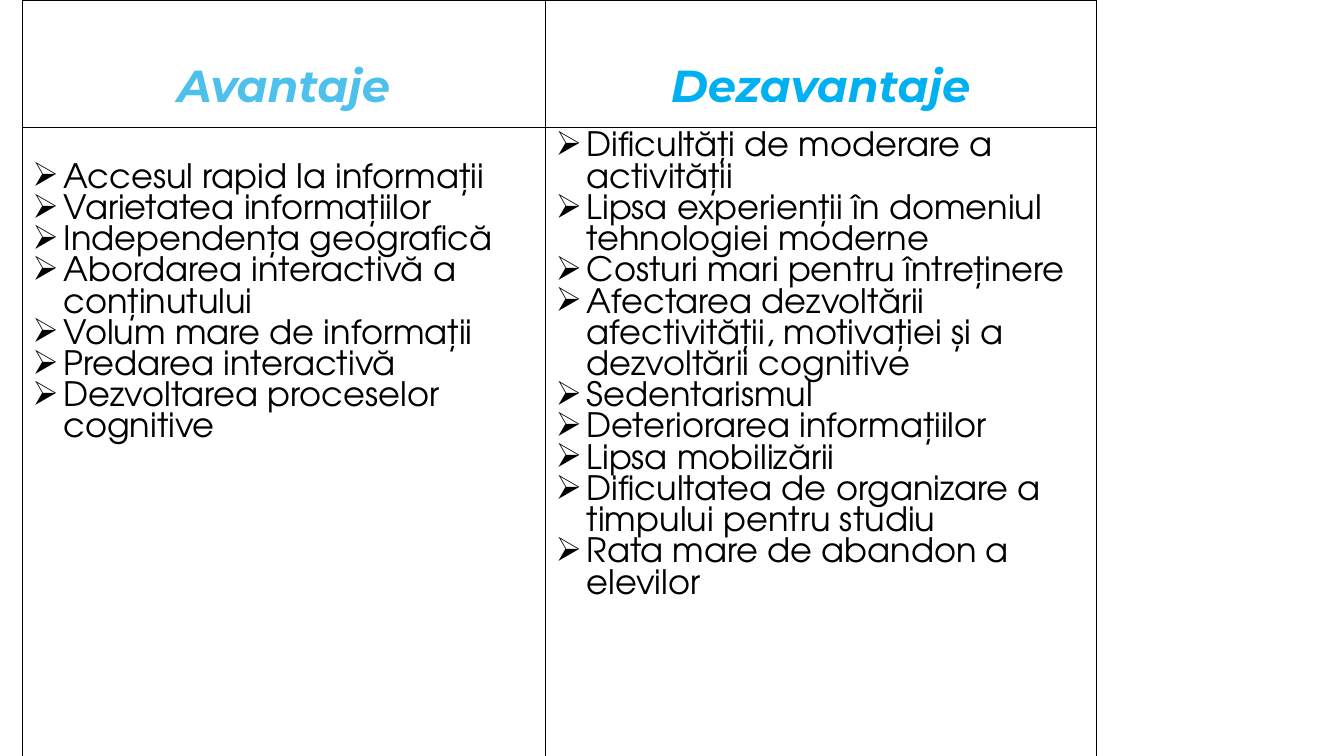
import pptx
import pptx.util
import pptx.dml.color
import pptx.enum.text
import pptx.oxml
import pptx.oxml.ns
from pptx.util import Inches

theme = {
    "line": "000000",
    "edge": 0.5,
    "head": {"name": "Montserrat", "size": pptx.util.Pt(32), "bold": True, "italic": True},
    "body": {"name": "TeX Gyre Adventor", "size": pptx.util.Pt(24), "bold": False, "italic": False},
    "pitch": pptx.util.Pt(22.3),
    "text": "000000",
}
sides = [
    {
        "title": "Avantaje",
        "color": "4EC0EC",
        "width": 5.19,
        "top": 0.36,
        "items": [
            "Accesul rapid la informații",
            "Varietatea informațiilor",
            "Independența geografică",
            "Abordarea interactivă a conținutului",
            "Volum mare de informații",
            "Predarea interactivă",
            "Dezvoltarea proceselor cognitive",
        ],
    },
    {
        "title": "Dezavantaje",
        "color": "00B0F0",
        "width": 5.46,
        "top": 0.05,
        "items": [
            "Dificultăți de moderare a activității",
            "Lipsa experienții în domeniul tehnologiei moderne",
            "Costuri mari pentru întreținere",
            "Afectarea dezvoltării afectivității, motivației și a dezvoltării cognitive",
            "Sedentarismul",
            "Deteriorarea informațiilor",
            "Lipsa mobilizării",
            "Dificultatea de organizare a timpului pentru studiu",
            "Rata mare de abandon a elevilor",
        ],
    },
]


def write(para, text, style, color):
    run = para.add_run()
    run.text = text
    for key, value in theme[style].items():
        setattr(run.font, key, value)
    run.font.color.rgb = pptx.dml.color.RGBColor.from_string(color)


def frame(cell):
    cell.fill.background()
    props = cell._tc.get_or_add_tcPr()
    for index, side in enumerate("LRTB"):
        props.insert(index, pptx.oxml.parse_xml(
            f'<a:ln{side} {pptx.oxml.ns.nsdecls("a")} w="{pptx.util.Pt(theme["edge"])}">'
            f'<a:solidFill><a:srgbClr val="{theme["line"]}"/></a:solidFill></a:ln{side}>'))


deck = pptx.Presentation()
deck.slide_width, deck.slide_height = Inches(13.33), Inches(7.5)
slide = deck.slides.add_slide(deck.slide_layouts[6])

table = slide.shapes.add_table(
    2, 2, Inches(0.22), Inches(0), Inches(10.65), Inches(7.77)).table
table.first_row = False
table.horz_banding = False
for row, height in zip(table.rows, (1.26, 6.51)):
    row.height = Inches(height)

for col, side in enumerate(sides):
    table.columns[col].width = Inches(side["width"])
    head, body = table.cell(0, col), table.cell(1, col)
    for cell, top in ((head, 0.59), (body, side["top"])):
        frame(cell)
        cell.margin_top = Inches(top)

    para = head.text_frame.paragraphs[0]
    para.alignment = pptx.enum.text.PP_ALIGN.CENTER
    write(para, side["title"], "head", side["color"])

    for index, item in enumerate(side["items"]):
        para = body.text_frame.add_paragraph() if index else body.text_frame.paragraphs[0]
        props = para._p.get_or_add_pPr()
        props.set("marL", str(Inches(0.31)))
        props.set("indent", str(Inches(-0.31)))
        props.append(pptx.oxml.parse_xml(
            f'<a:buChar {pptx.oxml.ns.nsdecls("a")} char="➢"/>'))
        para.line_spacing = theme["pitch"]
        write(para, item, "body", theme["text"])

deck.save("out.pptx")
